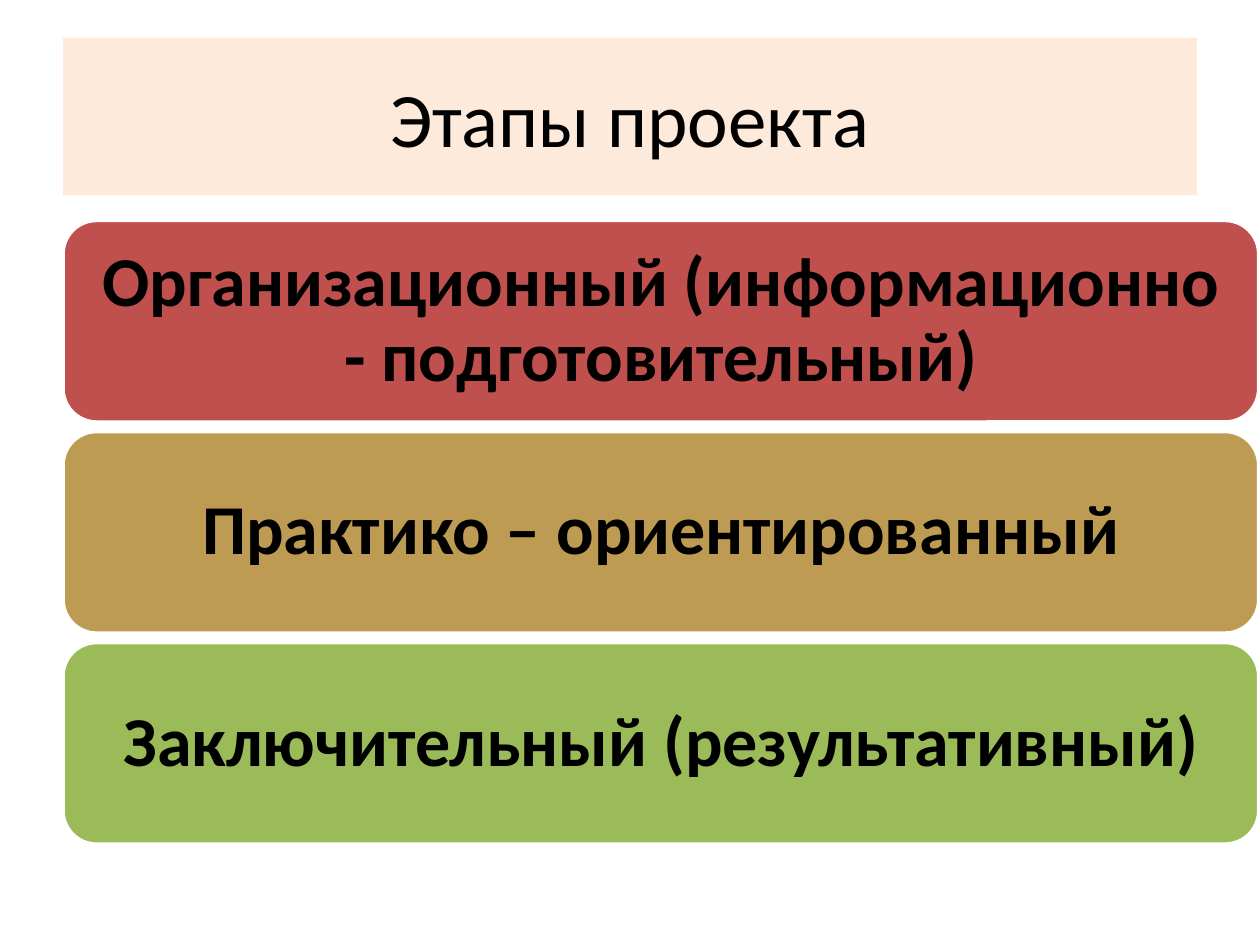
from dataclasses import dataclass

import pptx
import pptx.dml.color
import pptx.enum.shapes
import pptx.enum.text
import pptx.slide
import pptx.util
from pptx.dml.color import RGBColor
from pptx.util import Inches

BLACK = RGBColor(0x00, 0x00, 0x00)
WHITE = RGBColor(0xFF, 0xFF, 0xFF)
PEACH = RGBColor(0xFD, 0xEA, 0xDA)
RED = RGBColor(0xC0, 0x50, 0x4D)
OCHRE = RGBColor(0xBD, 0x9B, 0x53)
GREEN = RGBColor(0x9B, 0xBB, 0x59)

FONT = "Calibri"
LEFT = 0.5
STAGE_TOP, STAGE_STEP = 1.75, 1.675
STAGE_WIDTH, STAGE_HEIGHT = 9.49, 1.6


@dataclass(frozen=True)
class Stage:
    name: str
    color: RGBColor


STAGES = [
    Stage("Организационный (информационно - подготовительный)", RED),
    Stage("Практико – ориентированный", OCHRE),
    Stage("Заключительный (результативный)", GREEN),
]


def write_centred(frame: pptx.text.text.TextFrame, text: str, size: int, bold: bool) -> None:
    frame.text = text
    frame.word_wrap = True
    frame.vertical_anchor = pptx.enum.text.MSO_ANCHOR.MIDDLE
    paragraph = frame.paragraphs[0]
    paragraph.alignment = pptx.enum.text.PP_ALIGN.CENTER
    font = paragraph.runs[0].font
    font.name = FONT
    font.size = pptx.util.Pt(size)
    font.bold = bold
    font.color.rgb = BLACK


def add_heading(slide: pptx.slide.Slide, text: str) -> None:
    heading = slide.shapes.title
    heading.left, heading.top = Inches(LEFT), Inches(0.3)
    heading.width, heading.height = Inches(9), Inches(1.25)
    heading.fill.solid()
    heading.fill.fore_color.rgb = PEACH
    write_centred(heading.text_frame, text, 44, False)


def add_stage(slide: pptx.slide.Slide, stage: Stage, top: float) -> None:
    bar = slide.shapes.add_shape(
        pptx.enum.shapes.MSO_SHAPE.ROUNDED_RECTANGLE,
        Inches(LEFT), Inches(top), Inches(STAGE_WIDTH), Inches(STAGE_HEIGHT),
    )
    bar.shadow.inherit = False
    bar.fill.solid()
    bar.fill.fore_color.rgb = stage.color
    bar.line.color.rgb = WHITE
    bar.line.width = pptx.util.Pt(2)
    frame = bar.text_frame
    frame.margin_left = frame.margin_right = Inches(0.09)
    frame.margin_top = frame.margin_bottom = 0
    write_centred(frame, stage.name, 40, True)
    frame.paragraphs[0].line_spacing = 0.9


def main() -> None:
    presentation = pptx.Presentation()
    presentation.slide_width = Inches(10)
    presentation.slide_height = Inches(7.5)
    slide = presentation.slides.add_slide(presentation.slide_layouts.get_by_name("Title Only"))
    add_heading(slide, "Этапы проекта")
    for index, stage in enumerate(STAGES):
        add_stage(slide, stage, STAGE_TOP + index * STAGE_STEP)
    presentation.save("out.pptx")


if __name__ == "__main__":
    main()
